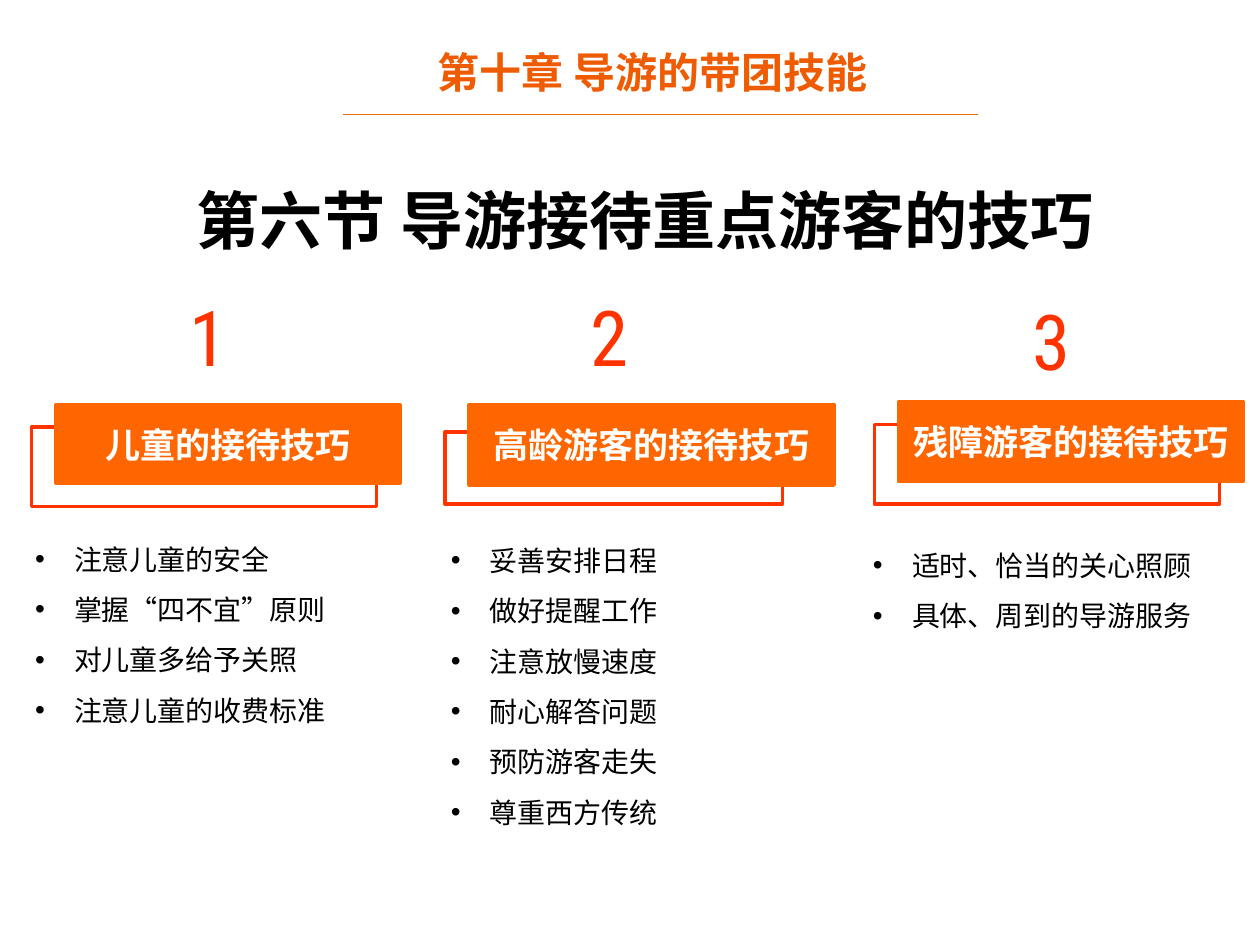
from dataclasses import dataclass

from lxml import etree
from pptx import Presentation
from pptx.dml.color import RGBColor
from pptx.enum import lang, shapes, text
from pptx.oxml import ns
from pptx.util import Inches, Pt

Box = tuple[float, float, float, float]  # left, top, width, height in inches


@dataclass(frozen=True)
class Theme:
    chapter: str = "EE5B00"
    rule: str = "E46C0A"
    accent: str = "FF3300"
    banner: str = "FF6600"
    ink: str = "000000"
    light: str = "FFFFFF"
    body_font: str = "Calibri"
    chinese_font: str = "Noto Sans CJK SC"
    number_font: str = "Roboto Condensed"
    chapter_size: int = 24
    section_size: int = 36
    number_size: int = 44
    banner_size: int = 20
    body_size: int = 16


@dataclass(frozen=True)
class Topic:
    heading: str
    tips: list[str]
    number_at: Box
    frame_at: Box
    banner_at: Box
    tips_at: Box


THEME = Theme()
TOPICS = [
    Topic("儿童的接待技巧",
          ["注意儿童的安全", "掌握“四不宜”原则", "对儿童多给予关照", "注意儿童的收费标准"],
          (1.41, 2.25, 0.8, 0.82), (0.25, 3.39, 2.74, 0.63),
          (0.44, 3.21, 2.74, 0.63), (0.18, 4.12, 3, 1.67)),
    Topic("高龄游客的接待技巧",
          ["妥善安排日程", "做好提醒工作", "注意放慢速度",
           "耐心解答问题", "预防游客走失", "尊重西方传统"],
          (4.59, 2.25, 0.79, 0.84), (3.53, 3.43, 2.68, 0.57),
          (3.72, 3.21, 2.9, 0.64), (3.48, 4.13, 2.9, 2.89)),
    Topic("残障游客的接待技巧",
          ["适时、恰当的关心照顾", "具体、周到的导游服务"],
          (8.1, 2.28, 0.8, 0.84), (6.94, 3.37, 2.74, 0.63),
          (7.13, 3.19, 2.74, 0.63), (6.83, 4.17, 3.25, 0.86)),
]


def inches(box: Box) -> list[int]:
    return [Inches(length) for length in box]


def add_bullet(paragraph) -> None:
    properties = paragraph._p.get_or_add_pPr()
    properties.set("marL", str(Inches(0.31)))
    properties.set("indent", str(-Inches(0.31)))
    etree.SubElement(properties, ns.qn("a:buFont")).set("typeface", "Arial")
    etree.SubElement(properties, ns.qn("a:buChar")).set("char", "•")


def write(holder, lines: list[str], *, size: int, color: str,
          font: str = THEME.body_font, bold: bool = False,
          align=text.PP_ALIGN.CENTER, anchor=text.MSO_ANCHOR.TOP,
          grow: bool = True, bullets: bool = False) -> None:
    """Fill a shape with one formatted paragraph per line."""
    frame = holder.text_frame
    frame.word_wrap = True
    frame.vertical_anchor = anchor
    frame.auto_size = (text.MSO_AUTO_SIZE.SHAPE_TO_FIT_TEXT if grow
                       else text.MSO_AUTO_SIZE.NONE)
    for index, line in enumerate(lines):
        paragraph = frame.add_paragraph() if index else frame.paragraphs[0]
        if bullets:
            add_bullet(paragraph)
            paragraph.line_spacing = 1.5
        paragraph.alignment = align
        run = paragraph.add_run()
        run.text = line
        run.font.name = font
        run.font.size = Pt(size)
        run.font.bold = bold
        run.font.color.rgb = RGBColor.from_string(color)
        run.font.language_id = lang.MSO_LANGUAGE_ID.SIMPLIFIED_CHINESE
        east_asian = etree.Element(ns.qn("a:ea"), typeface=THEME.chinese_font)
        run._r.rPr.find(ns.qn("a:latin")).addnext(east_asian)


def add_text(slide, box: Box, lines: list[str], **style) -> None:
    write(slide.shapes.add_textbox(*inches(box)), lines, **style)


def add_rectangle(slide, box: Box, line: str, fill: str | None = None):
    rectangle = slide.shapes.add_shape(shapes.MSO_SHAPE.RECTANGLE, *inches(box))
    rectangle.shadow.inherit = False
    rectangle.line.color.rgb = RGBColor.from_string(line)
    rectangle.line.width = Pt(2)
    if fill:
        rectangle.fill.solid()
        rectangle.fill.fore_color.rgb = RGBColor.from_string(fill)
    else:
        rectangle.fill.background()
    return rectangle


def add_header(slide) -> None:
    rule = slide.shapes.add_connector(
        shapes.MSO_CONNECTOR.STRAIGHT, *inches((2.72, 0.91, 7.76, 0.91)))
    rule.line.color.rgb = RGBColor.from_string(THEME.rule)
    rule.line.width = Pt(0.75)
    etree.SubElement(rule._element.spPr, ns.qn("a:effectLst"))

    add_text(slide, (2.82, 0.32, 4.72, 0.5), ["第十章 导游的带团技能"],
             size=THEME.chapter_size, color=THEME.chapter, bold=True)

    section = slide.shapes.title
    section.left, section.top, section.width, section.height = inches(
        (0.75, 1.39, 8.74, 0.71))
    write(section, ["第六节 导游接待重点游客的技巧"], size=THEME.section_size,
          color=THEME.ink, font=THEME.chinese_font, bold=True)


def add_topic(slide, number: int, topic: Topic) -> None:
    add_text(slide, topic.tips_at, topic.tips, size=THEME.body_size,
             color=THEME.ink, align=text.PP_ALIGN.JUSTIFY, bullets=True)
    add_rectangle(slide, topic.frame_at, THEME.accent)
    banner = add_rectangle(slide, topic.banner_at, THEME.banner, THEME.banner)
    write(banner, [topic.heading], size=THEME.banner_size, color=THEME.light,
          bold=True, anchor=text.MSO_ANCHOR.MIDDLE, grow=False)
    add_text(slide, topic.number_at, [str(number)], size=THEME.number_size,
             color=THEME.accent, font=THEME.number_font,
             align=text.PP_ALIGN.LEFT)


def main() -> None:
    deck = Presentation()
    deck.slide_width, deck.slide_height = Inches(10), Inches(7.5)
    slide = deck.slides.add_slide(deck.slide_layouts.get_by_name("Title Only"))
    add_header(slide)
    for number, topic in enumerate(TOPICS, start=1):
        add_topic(slide, number, topic)
    deck.save("out.pptx")


if __name__ == "__main__":
    main()
